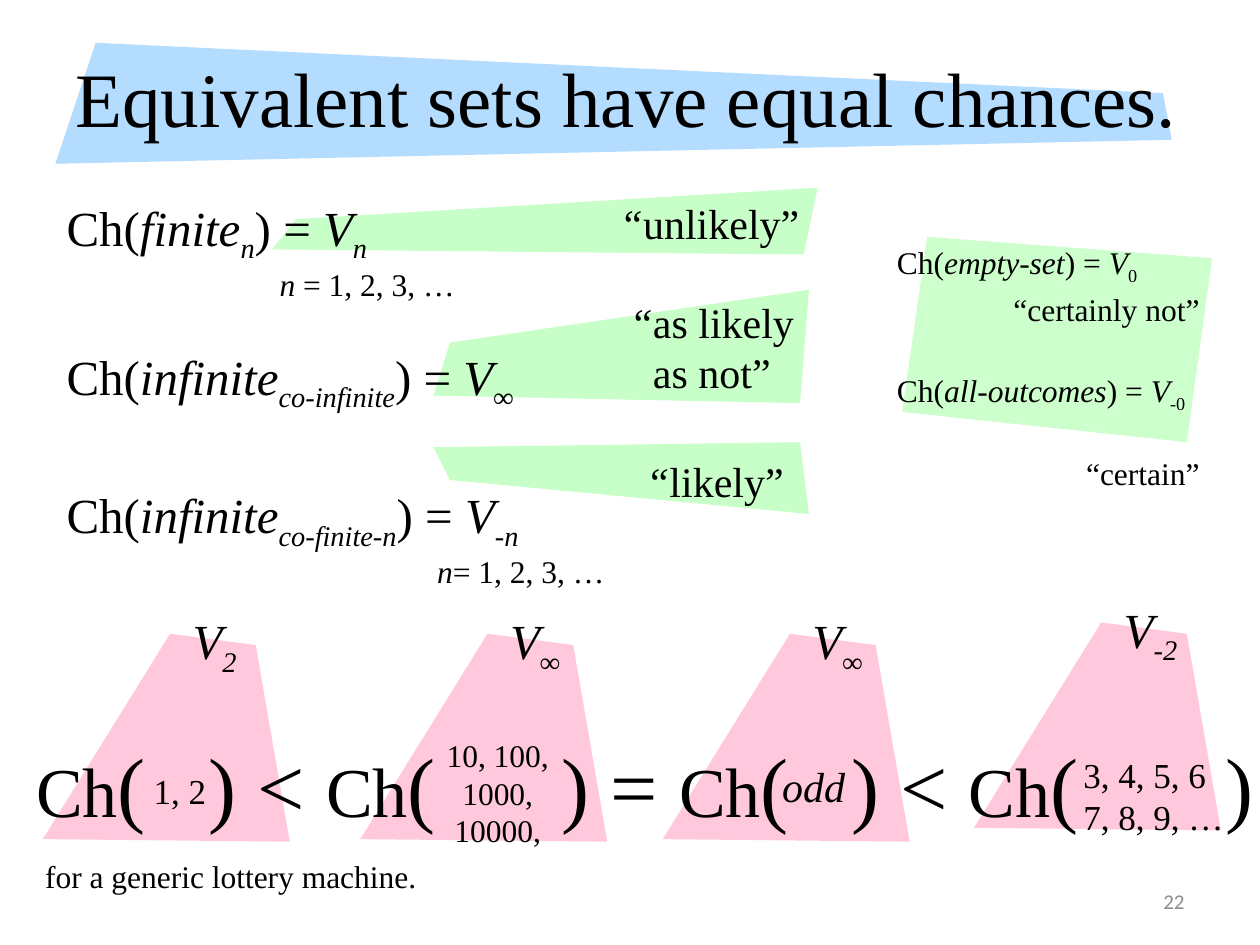
from lxml.etree import SubElement
from pptx import Presentation
from pptx.dml.color import RGBColor
from pptx.enum.text import MSO_ANCHOR, PP_ALIGN
from pptx.oxml.ns import qn
from pptx.util import Pt

PX = 9144  # 100 px to the inch
BLACK = RGBColor(0, 0, 0)
GREY = RGBColor(0x8C, 0x8C, 0x8C)
BLUE = RGBColor(0xB4, 0xDC, 0xFF)
GREEN = RGBColor(0xC8, 0xFF, 0xC8)
PALE_GREEN = RGBColor(0xCC, 0xFF, 0xCC)
PINK = RGBColor(0xFF, 0xC8, 0xDC)

prs = Presentation()
prs.slide_width, prs.slide_height = 1000 * PX, 750 * PX
s = prs.slides.add_slide(prs.slide_layouts[6])


def add_patch(points, color):
    fb = s.shapes.build_freeform(*points[0], scale=PX)
    fb.add_line_segments(points[1:], close=True)
    sp = fb.convert_to_shape()
    sp.shadow.inherit = False
    sp.fill.solid()
    sp.fill.fore_color.rgb = color
    sp.line.fill.background()


def add_text(box, size, paras, align=PP_ALIGN.LEFT, wrap=False,
             font="Times New Roman", color=BLACK, anchor=MSO_ANCHOR.TOP):
    """Each run is (text, style[, size]); style i = italic, s = subscript."""
    tf = s.shapes.add_textbox(*(v * PX for v in box)).text_frame
    tf.word_wrap = wrap
    tf.vertical_anchor = anchor
    for n, runs in enumerate(paras):
        p = tf.paragraphs[0] if n == 0 else tf.add_paragraph()
        p.alignment = align
        for text, style, *own_size in runs:
            if text == "\n":
                p.add_line_break()
                continue
            r = p.add_run()
            r.text = text
            r.font.name = font
            r.font.size = Pt(own_size[0] if own_size else size)
            r.font.italic = "i" in style
            r.font.color.rgb = color
            if "s" in style:
                r._r.get_or_add_rPr().set("baseline", "-25000")
    return tf


# Green bands with their verbal chances
add_patch([(357, 381), (642, 408), (635, 351), (344, 355)], GREEN)
add_text((503, 357, 133, 50), 24, [[("“", "i"), ("likely”", "")]], wrap=True)
add_patch([(357, 272), (642, 230), (635, 320), (344, 314)], GREEN)
add_text((488, 230, 154, 91), 24,
         [[("“", "i"), ("as likely", "")], [("as not”", "")]], PP_ALIGN.CENTER)
add_patch([(235, 174), (649, 149), (638, 202), (216, 198)], GREEN)
add_text((482, 152, 166, 50), 24, [[("“", "i"), ("unlikely”", "")]])

# Pink patches with the values of the four sets
for x, y, width, index in [(773, 494, 71, "-2"), (526, 503, 67, "∞"),
                           (286, 503, 67, "∞"), (34, 503, 62, "2")]:
    add_patch([(x + 101, y), (x + 169, y + 9), (x + 196, y + 165),
               (x, y + 163)], PINK)
    add_text((x + 109, y - 23, width, 57), 28, [[("V", "i"), (index, "is")]])

# Title
add_patch([(76, 34), (923, 74), (930, 111), (44, 130)], BLUE)
add_text((50, 30, 912, 94), 44, [[("Equivalent sets have equal chances.", "")]],
         wrap=True, anchor=MSO_ANCHOR.MIDDLE)

# Slide number
add_text((717, 695, 233, 40), 12, [[("22", "")]], PP_ALIGN.RIGHT, True,
         "Calibri", GREY, MSO_ANCHOR.MIDDLE)

# Chances of finite and infinite sets
tf = add_text((43, 152, 451, 321), 28, [
    [("Ch(", ""), ("finite", "i"), ("n", "is"), (") = ", ""), ("V", "i"),
     ("n", "is"), ("\n", ""), ("n ", "i", 18), ("= 1, 2, 3, …", "", 18)],
    [("Ch(", ""), ("infinite", "i"), ("co-infinite", "is"), (") = ", ""),
     ("V", "i"), ("∞", "is")],
    [("Ch(", ""), ("infinite", "i"), ("co-finite-n", "is"), (") = ", ""),
     ("V", "i"), ("-n", "is"), ("\n", ""), ("n", "i", 18),
     ("= 1, 2, 3, …", "", 18)],
])
for p, indent, space in zip(tf.paragraphs, (169, 250, 294), (6, 25, 41)):
    p.space_before = Pt(space)
    pPr = p._p.get_or_add_pPr()
    pPr.set("marL", str(indent * PX))
    pPr.set("indent", str(-indent * PX))

# Comparison of chances, with a tab stop at each closing bracket
runs = []
for closing in (") < ", ") = ", ") < ", ")"):
    runs += [("Ch", "", 40), ("(\t" + closing, "")]
tf = add_text((19, 577, 996, 91), 48, [runs], wrap=True)
tabs = SubElement(tf.paragraphs[0]._p.get_or_add_pPr(), qn("a:tabLst"))
for stop in (137, 417, 647, 944):
    SubElement(tabs, qn("a:tab"), pos=str(stop * PX), algn="l")

# Sets inside the brackets
add_text((611, 599, 80, 50), 24, [[("odd", "i")]])
add_text((112, 606, 62, 44), 20, [[("1, 2", "")]])
add_text((850, 593, 132, 77), 20, [[("3, 4, 5, 6", "")], [("7, 8, 9, …", "")]])
add_text((344, 579, 102, 101), 18,
         [[("10, 100,", "")], [("1000,", "")], [("10000,", "")]],
         PP_ALIGN.CENTER)
add_text((26, 675, 317, 40), 18, [[("for a generic lottery machine.", "")]])

# Extreme cases
add_patch([(736, 188), (962, 205), (942, 351), (933, 350), (716, 327)],
          PALE_GREEN)
tf = add_text((702, 188, 260, 151), 18, [
    [("Ch(", ""), ("empty-set", "i"), (") = ", ""), ("V", "i"), ("0", "s")],
    [("“certainly not”", "")],
    [("Ch(", ""), ("all-outcomes", "i"), (") = ", ""), ("V", "i"),
     ("-", "is"), ("0", "s")],
    [("“certain”", "")],
], wrap=True)
for p, space in zip(tf.paragraphs, (3, 2, 25, 23)):
    p.space_before = Pt(space)
for p in tf.paragraphs[1::2]:
    p.alignment = PP_ALIGN.RIGHT

prs.save("out.pptx")
